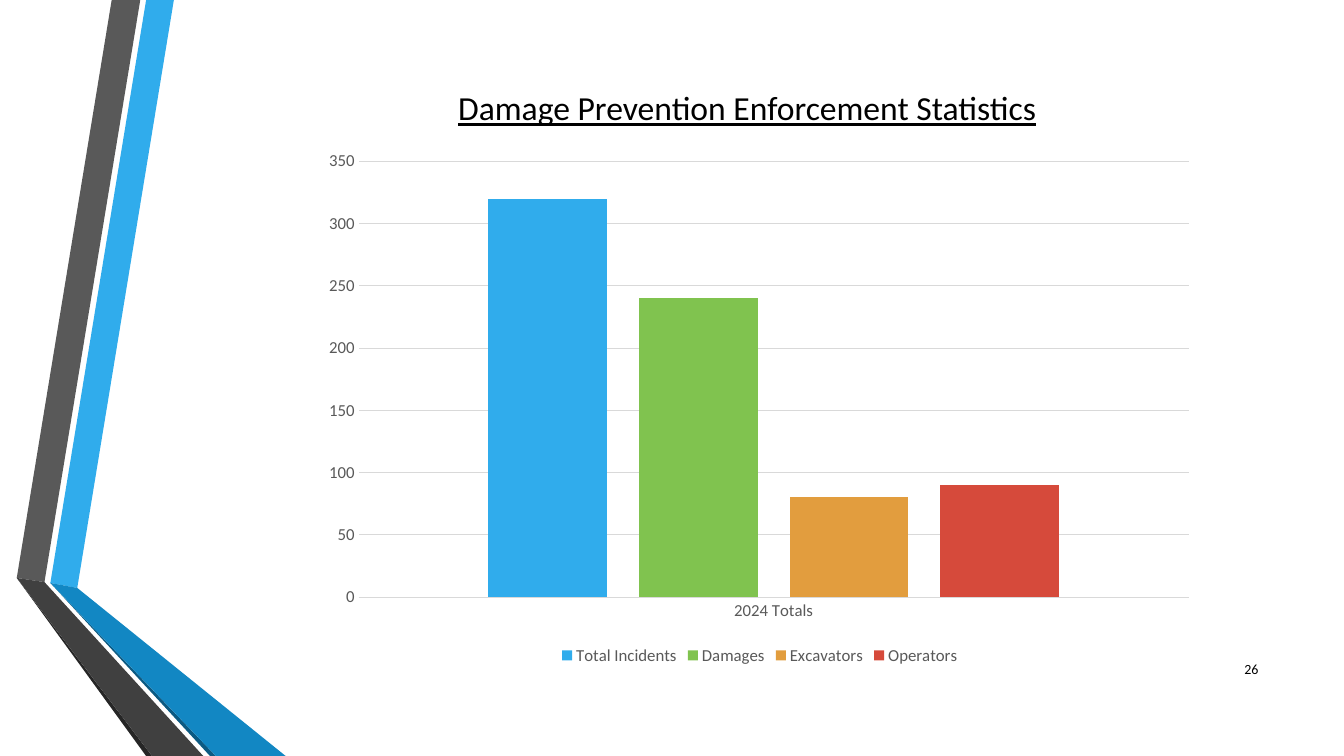
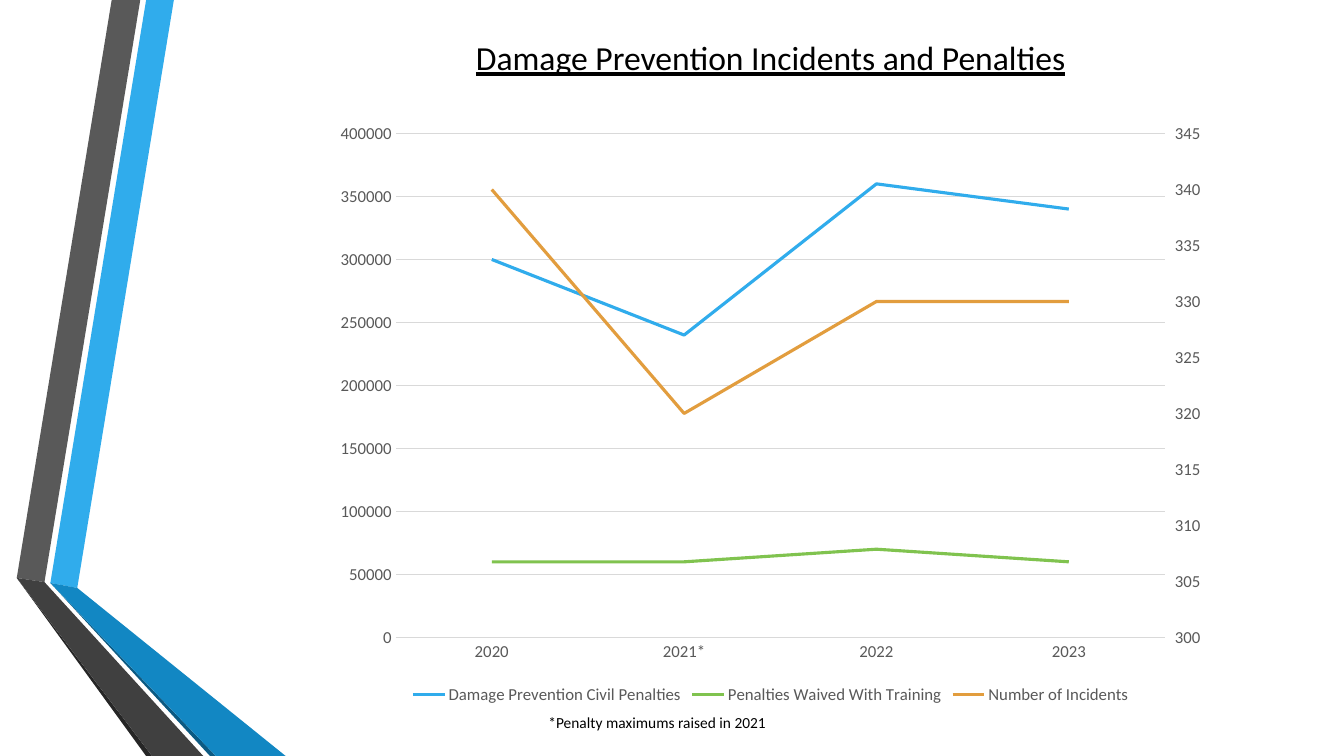
from copy import deepcopy
from lxml.etree import SubElement
from pptx import Presentation
from pptx.chart.data import CategoryChartData
from pptx.dml.color import RGBColor
from pptx.enum.chart import XL_CHART_TYPE, XL_LEGEND_POSITION, XL_TICK_MARK
from pptx.enum.text import MSO_ANCHOR, PP_ALIGN
from pptx.oxml.ns import qn
from pptx.util import Inches, Pt

FONT = "Calibri"
BLACK, GREY, RULE = "000000", "595959", "D9D9D9"
BLUE, GREEN, AMBER, RED = "30ACEC", "80C34F", "E29D3E", "D64A3B"
LEFT, MID, RIGHT = PP_ALIGN.LEFT, PP_ALIGN.CENTER, PP_ALIGN.RIGHT

# The slide is a grid of 160 columns by 90 rows of square cells.
COLS, ROWS = 160, 90
CELL = Inches(7.5) / ROWS


def rgb(code):
    return RGBColor.from_string(code)


def grid(*counts):
    """Turn counts of grid cells into lengths."""
    return [round(n * CELL) for n in counts]


RIBBONS = [
    (BLUE, [(6, 69.4), (9.2, 70), (20.7, 0), (17.4, 0)]),
    (GREY, [(16.7, 0), (13.3, 0), (2, 68.8), (5.3, 69.3)]),
    ("262626", [(2, 68.8), (17.4, ROWS), (18.1, ROWS)]),
    ("0C5A82", [(6, 69.4), (25, ROWS), (25.7, ROWS)]),
    ("1287C3", [(6, 69.4), (25.7, ROWS), (34, ROWS), (9.2, 70)]),
    ("404040", [(24.2, ROWS), (5.3, 69.3), (2, 68.8), (18.1, ROWS)]),
]

# Boxes are left, top, width, height; texts start with the slide title.
PAGES = [
    dict(
        texts=[
            ("Damage Prevention Enforcement Statistics", (51.7, 9.8, 74.5, 6), 24, MID),
            ("26", (143.8, 77.2, 7.2, 4.8), 10, RIGHT),
        ],
        kind=XL_CHART_TYPE.COLUMN_CLUSTERED,
        box=(37.1, 8.5, 106.7, 71.2),
        plot=(42.7, 19.2, 98.8, 51.9),
        top=350,
        cats=["2024 Totals"],
        rows=[
            ("Total Incidents", [320], BLUE),
            ("Damages", [240], GREEN),
            ("Excavators", [80], AMBER),
            ("Operators", [90], RED),
        ],
    ),
    dict(
        texts=[
            ("Damage Prevention Incidents and Penalties", (54.5, 3.8, 74.5, 6), 24, MID),
            ("*Penalty maximums raised in 2021", (64.1, 84.3, 31.8, 3.4), 11, LEFT),
        ],
        kind=XL_CHART_TYPE.LINE,
        box=(38.4, 13.2, 106.7, 71.2),
        plot=(47.1, 15.9, 91.6, 60),
        top=400000,
        cats=["2020", "2021*", "2022", "2023"],
        rows=[
            ("Damage Prevention Civil Penalties", [300000, 240000, 360000, 340000], BLUE),
            ("Penalties Waived With Training", [60000, 60000, 70000, 60000], GREEN),
            ("Number of Incidents", [340, 320, 330, 330], AMBER),
        ],
    ),
]

prs = Presentation()
prs.slide_width, prs.slide_height = grid(COLS, ROWS)
layout = prs.slide_layouts[5]
slides = [prs.slides.add_slide(layout) for page in PAGES]

# Ribbons are drawn once and moved to the back of the shared layout.
for n, (fill, points) in enumerate(RIBBONS):
    start, *rest = [grid(*point) for point in points]
    pen = slides[0].shapes.build_freeform(*start, scale=1.0)
    pen.add_line_segments(rest, close=True)
    ribbon = pen.convert_to_shape()
    ribbon.shadow.inherit = False
    ribbon.fill.solid()
    ribbon.fill.fore_color.rgb = rgb(fill)
    ribbon.line.fill.background()
    layout.shapes.element.insert(2 + n, ribbon.element)

for slide, page in zip(slides, PAGES):
    bars = page["kind"] == XL_CHART_TYPE.COLUMN_CLUSTERED
    data = CategoryChartData()
    data.categories = page["cats"]
    for name, vals, tint in page["rows"]:
        data.add_series(name, vals)
    chart = slide.shapes.add_chart(page["kind"], *grid(*page["box"]), data).chart
    chart.has_title = False
    chart.font.name, chart.font.size = FONT, Pt(12)
    chart.font.color.rgb = rgb(GREY)
    chart.has_legend = True
    chart.legend.position = XL_LEGEND_POSITION.BOTTOM
    chart.legend.include_in_layout = False

    cat, val = chart.category_axis, chart.value_axis
    for axis in (cat, val):
        axis.major_tick_mark = axis.minor_tick_mark = XL_TICK_MARK.NONE
    val.minimum_scale, val.maximum_scale = 0, page["top"]
    val.major_unit = 50 if bars else 50000
    val.format.line.fill.background()
    val.has_major_gridlines = True
    for rule in (cat.format.line, val.major_gridlines.format.line):
        rule.color.rgb = rgb(RULE)
        rule.width = Pt(0.75)

    group = chart.plots[0]
    group.vary_by_categories = False
    if bars:
        group.gap_width, group.overlap = 219, -27
    for row, (name, vals, tint) in zip(group.series, page["rows"]):
        if bars:
            row.format.fill.solid()
            row.format.fill.fore_color.rgb = rgb(tint)
        else:
            row.smooth = False
            row.format.line.color.rgb = rgb(tint)
            row.format.line.width = Pt(2.25)

    # Fix the inner plot area as shares of the chart.
    area = chart.element.xpath("c:chart/c:plotArea")[0]
    for old in area.xpath("c:layout"):
        area.remove(old)
    outer = SubElement(area, qn("c:layout"))
    area.insert(0, outer)
    inner = SubElement(outer, qn("c:manualLayout"))
    (left, top, wide, high), (x, y, w, h) = page["box"], page["plot"]
    for tag, value in [
        ("layoutTarget", "inner"), ("xMode", "edge"), ("yMode", "edge"),
        ("x", (x - left) / wide), ("y", (y - top) / high),
        ("w", w / wide), ("h", h / high),
    ]:
        SubElement(inner, qn("c:" + tag)).set("val", str(value))

    # The last line is measured on a second axis at the right.
    if not bars:
        first = area.xpath("c:lineChart")[0]
        second = deepcopy(first)
        first.remove(first.xpath("c:ser")[-1])
        for ser in second.xpath("c:ser")[:-1]:
            second.remove(ser)
        first.addnext(second)
        base, side = deepcopy(cat._element), deepcopy(val._element)
        val._element.addnext(side)
        side.addnext(base)
        ids = [ref.get("val") for ref in first.xpath("c:axId")]
        for part in (second, base, side):
            for ref in part.xpath("c:axId | c:crossAx"):
                ref.set("val", str(1001 + ids.index(ref.get("val"))))
        base.xpath("c:delete")[0].set("val", "1")
        side.remove(side.xpath("c:majorGridlines")[0])
        for query, value in [
            ("c:scaling/c:min", "300"), ("c:scaling/c:max", "345"),
            ("c:majorUnit", "5"), ("c:majorTickMark", "out"),
            ("c:axPos", "r"), ("c:crosses", "max"),
        ]:
            side.xpath(query)[0].set("val", value)

    for n, (text, box, size, align) in enumerate(page["texts"]):
        spot = grid(*box)
        shape = slide.shapes.add_textbox(*spot) if n else slide.shapes.title
        shape.left, shape.top, shape.width, shape.height = spot
        frame = shape.text_frame
        frame.text = text
        frame.word_wrap = True
        frame.vertical_anchor = MSO_ANCHOR.MIDDLE
        line = frame.paragraphs[0]
        line.alignment = align
        font = line.runs[0].font
        font.name, font.size, font.underline = FONT, Pt(size), n == 0
        font.color.rgb = rgb(BLACK)

prs.save("out.pptx")
